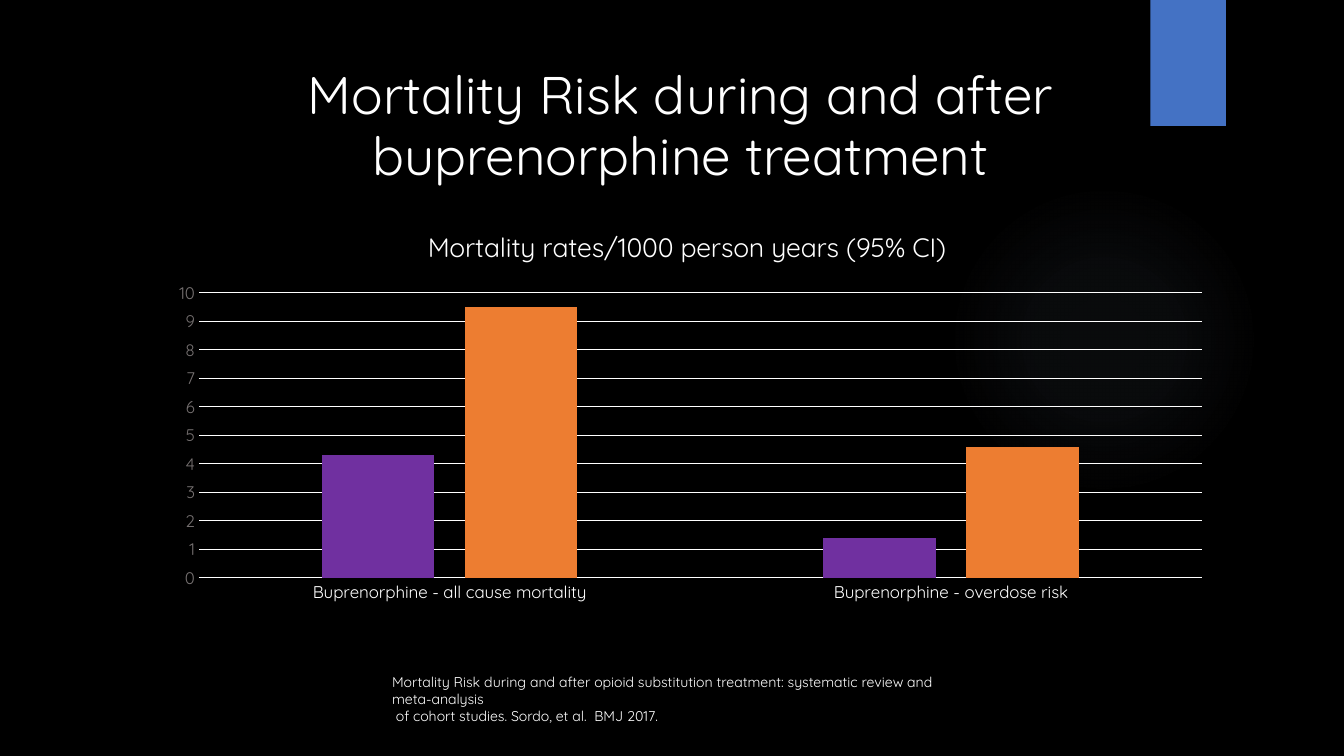
from lxml import etree
from pptx import Presentation
from pptx.chart.data import CategoryChartData
from pptx.dml.color import RGBColor
from pptx.enum.chart import XL_CHART_TYPE, XL_TICK_MARK
from pptx.enum.shapes import MSO_SHAPE
from pptx.enum.text import MSO_ANCHOR, PP_ALIGN
from pptx.oxml import parse_xml
from pptx.oxml.ns import nsdecls, qn
from pptx.util import Inches, Pt

COLUMNS = XL_CHART_TYPE.COLUMN_CLUSTERED
NO_TICK = XL_TICK_MARK.NONE
OVAL, RECTANGLE = MSO_SHAPE.OVAL, MSO_SHAPE.RECTANGLE
TOP = MSO_ANCHOR.TOP
LEFT, CENTER = PP_ALIGN.LEFT, PP_ALIGN.CENTER

FONT = "Quicksand"
COLORS = {
    "background": "000000",
    "text": "FFFFFF",
    "scale": "767171",
    "glow": "8497B0",
    "tab": "4472C4",
    "during": "7030A0",
    "after": "ED7D31",
}
GLOW_STOPS = [(0, 7), (36, 6), (69, 0)]
CATEGORIES = ["Buprenorphine - all cause mortality", "Buprenorphine - overdose risk"]
RATES = {"during": (4.3, 1.4), "after": (9.5, 4.6)}


def rgb(name):
    """Return the named palette colour."""
    return RGBColor.from_string(COLORS[name])


def style_font(font, size, color):
    """Set typeface, size and colour of a font."""
    font.name, font.size, font.bold = FONT, Pt(size), False
    font.color.rgb = rgb(color)


def add_text(slide, box, lines, size, align=LEFT, spacing=1.0):
    """Place a wrapped text block, one paragraph per line."""
    frame = slide.shapes.add_textbox(*map(Inches, box)).text_frame
    frame.word_wrap, frame.vertical_anchor = True, TOP
    for index, line in enumerate(lines):
        paragraph = frame.add_paragraph() if index else frame.paragraphs[0]
        paragraph.alignment, paragraph.line_spacing = align, spacing
        run = paragraph.add_run()
        run.text = line
        style_font(run.font, size, "text")


def add_plain_shape(slide, preset, box, color):
    """Place a filled shape without outline or shadow."""
    shape = slide.shapes.add_shape(preset, *map(Inches, box))
    shape.shadow.inherit = False
    shape.line.fill.background()
    shape.fill.solid()
    shape.fill.fore_color.rgb = rgb(color)
    return shape


def add_glow(slide, box):
    """Place a soft circle that fades out from its centre."""
    glow = add_plain_shape(slide, OVAL, box, "glow")
    stops = "".join(
        f'<a:gs pos="{pos * 1000}"><a:srgbClr val="{COLORS["glow"]}">'
        f'<a:alpha val="{alpha * 1000}"/></a:srgbClr></a:gs>'
        for pos, alpha in GLOW_STOPS
    )
    gradient = parse_xml(
        f'<a:gradFill {nsdecls("a")} rotWithShape="1"><a:gsLst>{stops}</a:gsLst>'
        '<a:path path="circle"><a:fillToRect l="50000" t="50000" r="50000" b="50000"/>'
        "</a:path></a:gradFill>"
    )
    solid = glow.element.spPr.find(qn("a:solidFill"))
    solid.getparent().replace(solid, gradient)


def set_layout(parent, before, **fractions):
    """Fix a chart part's place as fractions of the chart."""
    for old in parent.findall(qn("c:layout")):
        parent.remove(old)
    layout = etree.Element(qn("c:layout"))
    manual = etree.SubElement(layout, qn("c:manualLayout"))
    modes = {"xMode": "edge", "yMode": "edge"}
    if "w" in fractions:
        modes = {"layoutTarget": "inner", **modes}
    for tag, value in {**modes, **fractions}.items():
        etree.SubElement(manual, qn(f"c:{tag}")).set("val", str(value))
    parent.find(qn(before)).addprevious(layout)


def add_rates_chart(slide, box):
    """Place the column chart of mortality rates."""
    data = CategoryChartData()
    data.categories = CATEGORIES
    for rates in RATES.values():
        data.add_series("", rates)
    chart = slide.shapes.add_chart(COLUMNS, *map(Inches, box), data).chart
    style_font(chart.font, 10, "scale")
    chart.has_legend = False

    chart.has_title = True
    heading = chart.chart_title.text_frame.paragraphs[0].add_run()
    heading.text = "Mortality rates/1000 person years (95% CI)"
    style_font(heading.font, 19, "text")
    chart.chart_title.include_in_layout = False
    set_layout(chart.chart_title._element, "c:overlay", x=0.25, y=0.03)

    plot = chart.plots[0]
    plot.gap_width, plot.overlap, plot.vary_by_categories = 219, -27, False
    for series, period in zip(plot.series, RATES):
        series.format.fill.solid()
        series.format.fill.fore_color.rgb = rgb(period)
    set_layout(plot._element.getparent(), "c:barChart", x=0.04, y=0.19, w=0.94, h=0.65)

    outcomes, scale = chart.category_axis, chart.value_axis
    style_font(outcomes.tick_labels.font, 12.1, "text")
    style_font(scale.tick_labels.font, 12, "scale")
    for axis in (outcomes, scale):
        axis.major_tick_mark = axis.minor_tick_mark = NO_TICK
    scale.minimum_scale, scale.maximum_scale, scale.major_unit = 0, 10, 1
    scale.has_major_gridlines = True
    scale.format.line.fill.background()
    for line in (outcomes.format.line, scale.major_gridlines.format.line):
        line.color.rgb = rgb("text")
        line.width = Pt(0.75)


def build_mortality_slide(prs):
    """Build the mortality risk slide."""
    slide = prs.slides.add_slide(prs.slide_layouts[6])
    slide.background.fill.solid()
    slide.background.fill.fore_color.rgb = rgb("background")
    add_glow(slide, (9.41, 1.83, 3.08, 3.08))
    add_plain_shape(slide, RECTANGLE, (11.41, 0, 0.75, 1.25), "tab")
    add_text(slide, (1.83, 0.6, 9.84, 1.04),
             ["Mortality Risk during and after buprenorphine treatment"],
             37.8, CENTER, 0.96)
    add_rates_chart(slide, (1.55, 2.08, 10.58, 4.35))
    add_text(slide, (3.79, 6.63, 5.91, 0.44),
             ["Mortality Risk during and after opioid substitution treatment: "
              "systematic review and meta-analysis",
              " of cohort studies. Sordo, et al.  BMJ 2017."], 10.1)


def main():
    """Create and save the presentation."""
    prs = Presentation()
    prs.slide_width, prs.slide_height = Inches(13.33), Inches(7.5)
    build_mortality_slide(prs)
    prs.save("out.pptx")


if __name__ == "__main__":
    main()
